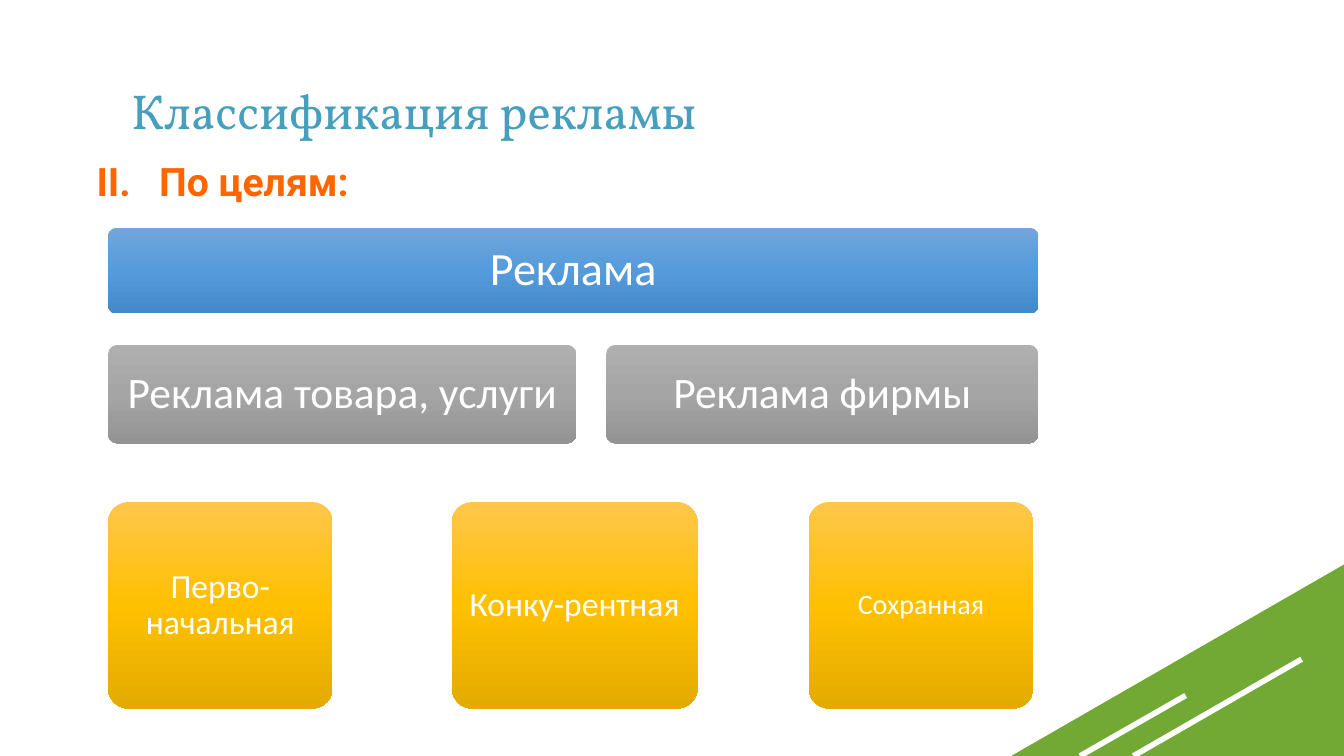
from copy import deepcopy
from dataclasses import dataclass

from pptx import Presentation
from pptx.dml.color import RGBColor
from pptx.enum.shapes import MSO_CONNECTOR as Connector, MSO_SHAPE as Shape
from pptx.enum.text import MSO_ANCHOR as Anchor, PP_ALIGN as Align
from pptx.oxml.ns import qn
from pptx.oxml.xmlchemy import OxmlElement
from pptx.util import Inches, Pt

WIDTH, HEIGHT = 13.33, 7.5


@dataclass(frozen=True)
class Theme:
    white: str = "FFFFFF"
    green: str = "71A934"
    title: str = "479FBE"
    goal: str = "FF6600"
    blue: tuple = ("71A6DB", "559BDB", "448ACA")
    grey: tuple = ("AFAFAF", "A5A5A5", "939393")
    gold: tuple = ("FFC64B", "FFC000", "E3AB00")
    title_font: str = "Vollkorn"
    goal_font: str = "Roboto"
    box_font: str = "Calibri"
    title_size: int = 35
    goal_size: int = 28


THEME = Theme()

# Tiers: top and height (% of slide height), colours, inset (inches),
# then boxes: left and width (% of slide width), type size, label
TIERS = [
    (30.13, 11.33, THEME.blue, 0.14, [(8.03, 69.24, 33, "Реклама")]),
    (45.6, 13.07, THEME.grey, 0.13, [
        (8.03, 34.88, 31, "Реклама товара, услуги"),
        (45.09, 32.18, 31, "Реклама фирмы"),
    ]),
    (66.4, 27.33, THEME.gold, 0.1, [
        (8.03, 16.73, 24, "Перво-начальная"),
        (33.61, 18.3, 24, "Конку-рентная"),
        (60.17, 16.73, 20, "Сохранная"),
    ]),
]


def across(percent):
    return Inches(WIDTH * percent / 100)


def down(percent):
    return Inches(HEIGHT * percent / 100)


def area(left, top, width, height):
    return across(left), down(top), across(width), down(height)


def write(frame, text, font, size, color, insets, anchor, bold=False):
    frame.text = text
    frame.word_wrap = True
    frame.vertical_anchor = anchor
    (frame.margin_left, frame.margin_top,
     frame.margin_right, frame.margin_bottom) = map(Inches, insets)
    paragraph = frame.paragraphs[0]
    paragraph.line_spacing = 0.9
    letters = paragraph.runs[0].font
    letters.name, letters.size, letters.bold = font, Pt(size), bold
    letters.color.rgb = RGBColor.from_string(color)
    return paragraph


def shade(shape, colors):
    """Fill from top to bottom with three evenly spaced colours."""
    shape.fill.gradient()
    shape.fill.gradient_angle = 270
    first = shape._element.spPr.find(".//" + qn("a:gs"))
    first.addnext(deepcopy(first))
    for index, (stop, color) in enumerate(zip(shape.fill.gradient_stops, colors)):
        stop.position = index / 2
        stop.color.rgb = RGBColor.from_string(color)


def add_box(slide, place, colors, inset, size, label):
    box = slide.shapes.add_shape(Shape.ROUNDED_RECTANGLE, *area(*place))
    box.adjustments[0] = 0.1
    box.shadow.inherit = False
    box.line.fill.background()
    shade(box, colors)
    paragraph = write(box.text_frame, label, THEME.box_font, size, THEME.white,
                      [inset] * 4, Anchor.MIDDLE)
    paragraph.alignment = Align.CENTER


def add_stripe(slide, x1, y1, x2, y2):
    stripe = slide.shapes.add_connector(
        Connector.STRAIGHT, across(x1), down(y1), across(x2), down(y2))
    stripe.line.width = Pt(4)
    stripe.line.color.rgb = RGBColor.from_string(THEME.white)
    stripe._element.spPr.append(OxmlElement("a:effectLst"))


def add_corner(slide):
    corner = slide.shapes.add_shape(
        Shape.RIGHT_TRIANGLE, *area(75.24, 74.67, 24.76, 25.33))
    corner._element.spPr.xfrm.set("flipH", "1")
    corner.shadow.inherit = False
    corner.fill.solid()
    corner.fill.fore_color.rgb = RGBColor.from_string(THEME.green)
    corner.line.fill.background()
    add_stripe(slide, 80.35, 100, 88.22, 92)
    add_stripe(slide, 84.32, 100, 96.85, 87.2)


def add_title(slide, text):
    title = slide.shapes.add_textbox(*area(9.75, 6.13, 67.52, 12.4))
    write(title.text_frame, text, THEME.title_font, THEME.title_size,
          THEME.title, (0, 0.05, 0, 0), Anchor.BOTTOM)


def add_goal(slide, text, number):
    goal = slide.shapes.add_textbox(*area(6.45, 20.8, 69.17, 8))
    paragraph = write(goal.text_frame, text, THEME.goal_font, THEME.goal_size,
                      THEME.goal, (0.1, 0.05, 0.1, 0.05), Anchor.TOP, bold=True)
    paragraph.space_before = Pt(10)
    # Roman numbering with a hanging indent
    properties = paragraph._p.get_or_add_pPr()
    properties.set("marL", str(Inches(0.62)))
    properties.set("indent", str(-Inches(0.62)))
    numbering = OxmlElement("a:buAutoNum")
    numbering.set("type", "romanUcPeriod")
    numbering.set("startAt", str(number))
    properties.append(numbering)


def main():
    deck = Presentation()
    deck.slide_width, deck.slide_height = Inches(WIDTH), Inches(HEIGHT)
    slide = deck.slides.add_slide(deck.slide_layouts[6])

    # Corner decoration and headings
    add_corner(slide)
    add_title(slide, "Классификация рекламы")
    add_goal(slide, "По целям:", 2)

    # Hierarchy of advertising types
    for top, height, colors, inset, boxes in TIERS:
        for left, width, size, label in boxes:
            add_box(slide, (left, top, width, height), colors, inset, size, label)

    deck.save("out.pptx")


if __name__ == "__main__":
    main()
